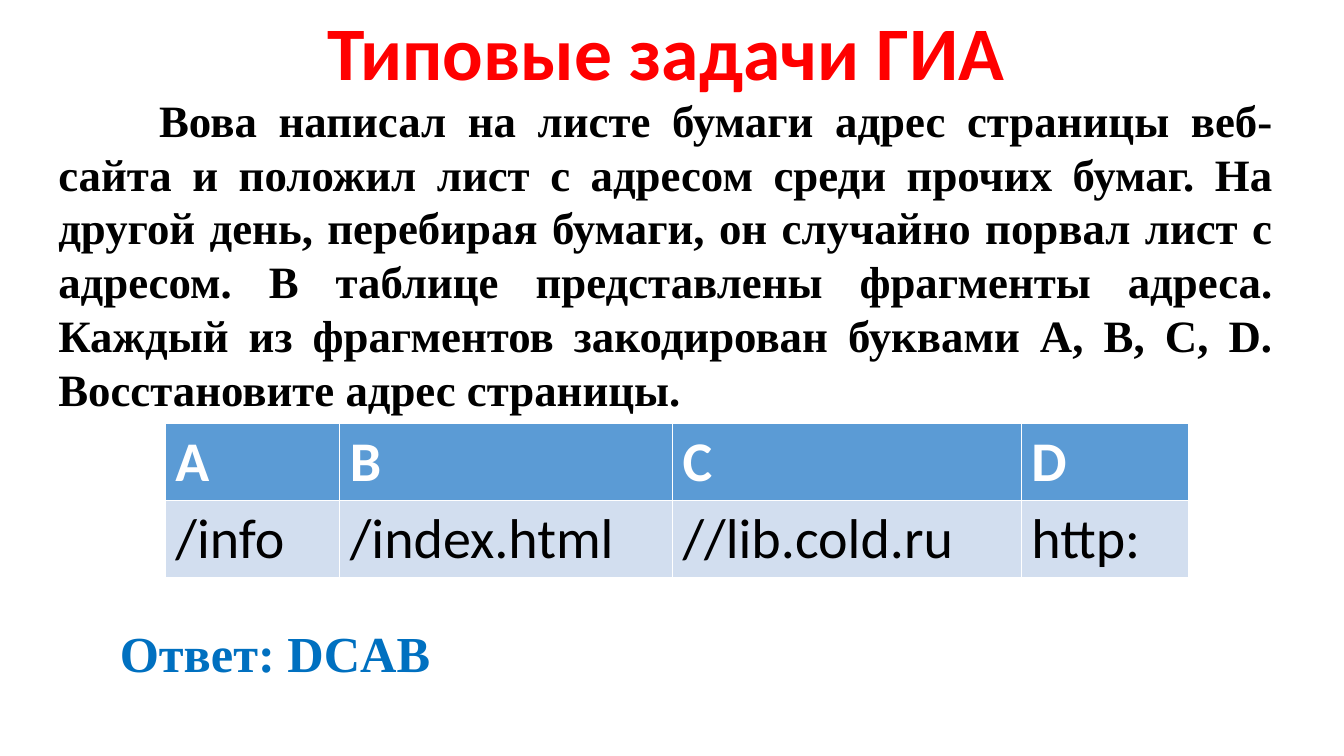
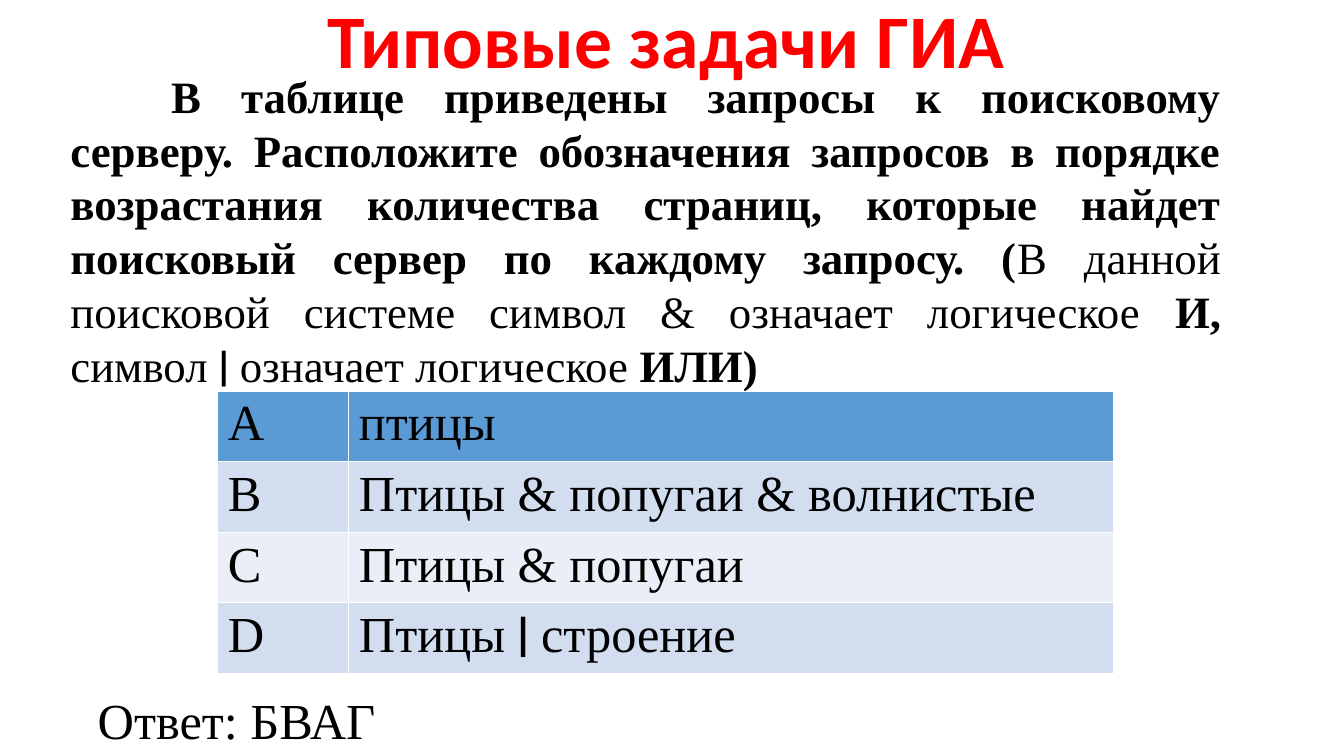
from lxml.etree import SubElement
from pptx import Presentation
from pptx.dml.color import RGBColor
from pptx.enum.text import MSO_AUTO_SIZE, PP_ALIGN
from pptx.oxml.ns import qn
from pptx.util import Inches, Pt

RED = RGBColor(0xFF, 0x00, 0x00)
ORANGE = RGBColor(0xED, 0x7D, 0x31)
BLACK = RGBColor(0x00, 0x00, 0x00)
WHITE = RGBColor(0xFF, 0xFF, 0xFF)
ANSWER_BLUE = RGBColor(0x00, 0x70, 0xC0)
HEADER_BLUE = RGBColor(0x5B, 0x9B, 0xD5)
BAND_DARK = RGBColor(0xD2, 0xDE, 0xEF)
BAND_LIGHT = RGBColor(0xEA, 0xEF, 0xF7)

SANS = "Calibri"
SERIF = "Times New Roman"
HEADING = "Типовые задачи ГИА"

ADDRESS_TASK = [
    ("Вова написал на листе бумаги адрес страницы веб-сайта и положил лист с адресом "
     "среди прочих бумаг. На другой день, перебирая бумаги, он случайно порвал лист с "
     "адресом. В таблице представлены фрагменты адреса. Каждый из фрагментов закодирован "
     "буквами А, В, С, D. Восстановите адрес страницы.", True),
]
ADDRESS_ROWS = [
    ["А", "В", "С", "D"],
    ["/info", "/index.html", "//lib.cold.ru", "http:"],
]
QUERY_TASK = [
    ("В таблице приведены запросы к поисковому серверу. Расположите обозначения запросов "
     "в порядке возрастания количества страниц, которые найдет поисковый сервер по каждому "
     "запросу. (", True),
    ("В данной поисковой системе символ & означает логическое ", False),
    ("И, ", True),
    ("символ ׀ означает логическое ", False),
    ("ИЛИ)", True),
]
QUERY_ROWS = [
    ["А", "птицы"],
    ["В", "Птицы & попугаи & волнистые"],
    ["С", "Птицы & попугаи"],
    ["D", "Птицы ׀ строение"],
]


def style_run(run, size, name, color, bold=False):
    """Set the font of one run."""
    run.font.size = Pt(size)
    run.font.name = name
    run.font.color.rgb = color
    run.font.bold = bold


def add_text(slide, box, segments, size, name, color, align=PP_ALIGN.LEFT, wrap=True):
    """Add a one-paragraph text box made of (text, bold) segments."""
    frame = slide.shapes.add_textbox(*map(Inches, box)).text_frame
    frame.word_wrap = wrap
    frame.auto_size = MSO_AUTO_SIZE.SHAPE_TO_FIT_TEXT
    paragraph = frame.paragraphs[0]
    paragraph.alignment = align
    for text, bold in segments:
        run = paragraph.add_run()
        run.text = text
        style_run(run, size, name, color, bold)
    return paragraph


def add_heading(slide, top):
    """Add the outlined red heading shared by the slides."""
    heading = add_text(slide, (3.11, top, 6.99, 1.01), [(HEADING, True)],
                       54, SANS, RED, PP_ALIGN.CENTER, wrap=False)
    properties = heading.runs[0].font._element
    outline = properties.makeelement(qn("a:ln"), {"w": str(Pt(1.75))})
    fill = SubElement(outline, qn("a:solidFill"))
    SubElement(fill, qn("a:srgbClr"), val=str(ORANGE))
    properties.insert(0, outline)


def add_task(slide, box, segments):
    """Add the justified task statement with a first-line indent."""
    task = add_text(slide, box, segments, 32, SERIF, BLACK, PP_ALIGN.JUSTIFY)
    task._p.get_or_add_pPr().set("indent", str(Inches(1)))


def add_grid(slide, left, top, widths, row_height, rows, size, name,
             header_color=BLACK, header_bold=False):
    """Add a table with a blue header row and alternating bands."""
    table = slide.shapes.add_table(
        len(rows), len(widths), Inches(left), Inches(top),
        Inches(sum(widths)), Inches(row_height * len(rows))).table
    for column, width in zip(table.columns, widths):
        column.width = Inches(width)
    for row_index, row in enumerate(rows):
        is_header = row_index == 0
        band = BAND_DARK if row_index % 2 else BAND_LIGHT
        for column_index, text in enumerate(row):
            cell = table.cell(row_index, column_index)
            cell.fill.solid()
            cell.fill.fore_color.rgb = HEADER_BLUE if is_header else band
            cell.text_frame.text = text
            style_run(cell.text_frame.paragraphs[0].runs[0], size, name,
                      header_color if is_header else BLACK,
                      header_bold and is_header)


def build_address_slide(slide):
    """Build the task about the torn web address."""
    add_heading(slide, 0)
    add_task(slide, (0.48, 0.87, 12.25, 3.33), ADDRESS_TASK)
    add_grid(slide, 1.64, 4.2, [1.73, 3.3, 3.46, 1.66], 0.765, ADDRESS_ROWS,
             40, SANS, WHITE, True)
    add_text(slide, (1.09, 6.12, 8.03, 0.71), [("Ответ: DCAB", True)],
             36, SERIF, ANSWER_BLUE)


def build_query_slide(slide):
    """Build the task about search queries."""
    add_heading(slide, -0.12)
    add_task(slide, (0.6, 0.63, 11.61, 3.41), QUERY_TASK)
    add_grid(slide, 2.16, 3.88, [1.3, 7.59], 0.7, QUERY_ROWS, 36, SERIF)
    add_text(slide, (0.87, 6.79, 5.37, 0.71), [("Ответ: БВАГ", False)],
             36, SERIF, BLACK, PP_ALIGN.JUSTIFY)


def main():
    """Build and save the presentation."""
    deck = Presentation()
    deck.slide_width = Inches(13.33)
    deck.slide_height = Inches(7.5)
    for build in (build_address_slide, build_query_slide):
        build(deck.slides.add_slide(deck.slide_layouts[6]))
    deck.save("out.pptx")


if __name__ == "__main__":
    main()
